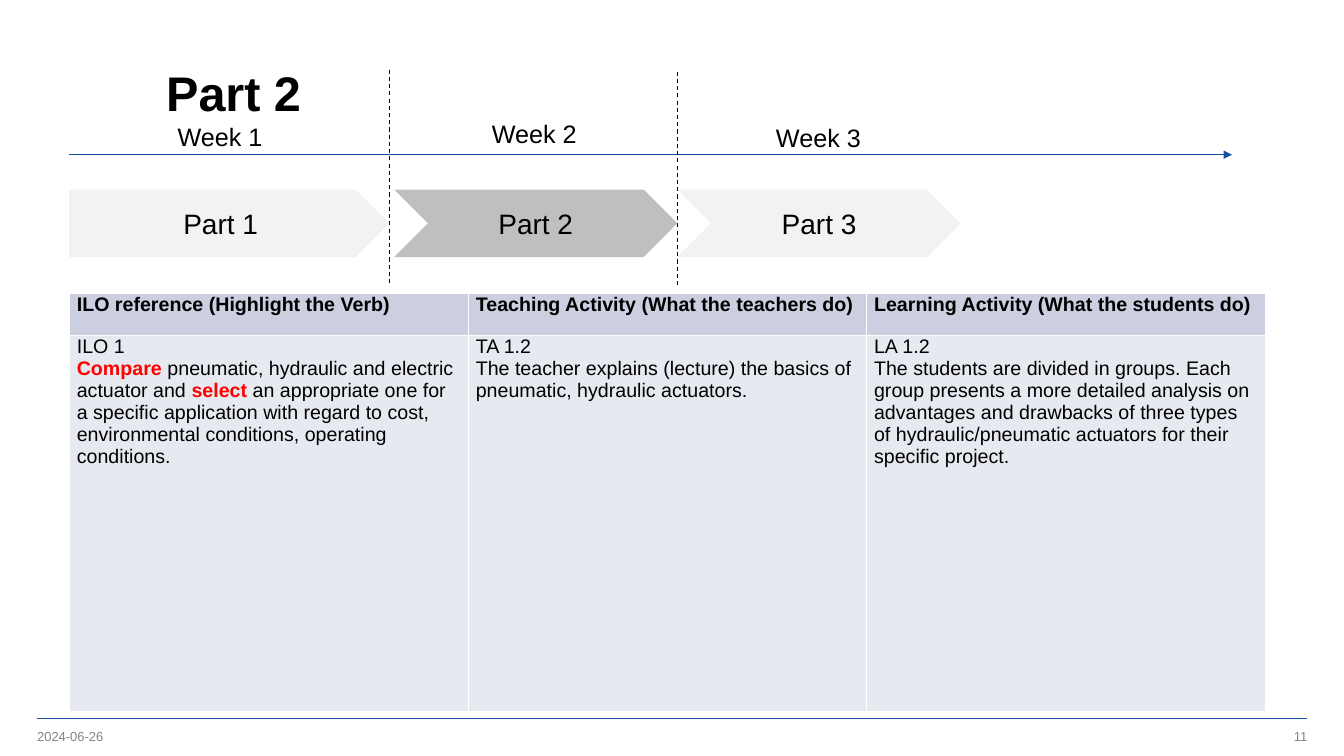
"""Build a slide with a course timeline and a table of linked activities."""
from dataclasses import dataclass

from lxml import etree
from pptx import Presentation
from pptx.dml.color import RGBColor
from pptx.enum.dml import MSO_LINE
from pptx.enum.shapes import MSO_CONNECTOR, MSO_SHAPE
from pptx.enum.text import MSO_ANCHOR, PP_ALIGN
from pptx.oxml import parse_xml
from pptx.oxml.ns import nsdecls, qn
from pptx.shapes.autoshape import Shape
from pptx.slide import Slide
from pptx.table import _Cell
from pptx.text.text import TextFrame
from pptx.util import Pt

PLATE, CHEVRON = MSO_SHAPE.PENTAGON, MSO_SHAPE.CHEVRON
STRAIGHT, DASH = MSO_CONNECTOR.STRAIGHT, MSO_LINE.DASH
TOP, MIDDLE = MSO_ANCHOR.TOP, MSO_ANCHOR.MIDDLE
LEFT, CENTER, RIGHT = PP_ALIGN.LEFT, PP_ALIGN.CENTER, PP_ALIGN.RIGHT


@dataclass(frozen=True)
class Theme:
    font: str = "Arial"
    ink: str = "000000"
    mark: str = "FF0000"
    muted: str = "848489"
    rule: str = "1954A6"
    arrow: str = "1451A5"
    pale: str = "F2F2F2"
    active: str = "BFBFBF"
    head: str = "CBCFE0"
    body: str = "E7E9F0"
    border: str = "FFFFFF"
    title: float = 34.7
    step: float = 20
    week: float = 18
    cell: float = 14
    foot: float = 9.3


@dataclass(frozen=True)
class Label:
    text: str
    left: float
    top: float
    width: float
    height: float
    size: float
    color: str
    bold: bool = False
    align: PP_ALIGN = LEFT
    anchor: MSO_ANCHOR = TOP
    pad: tuple[float, float] = (7.2, 3.6)
    wrap: bool = True
    space: float = 1


@dataclass(frozen=True)
class Step:
    text: str
    left: float
    width: float
    form: MSO_SHAPE
    fill: str


@dataclass(frozen=True)
class Line:
    start: tuple[float, float]
    end: tuple[float, float]
    color: str
    width: float = 0.75
    dashed: bool = False
    tipped: bool = False


@dataclass(frozen=True)
class Column:
    width: float
    head: str
    lines: tuple[str, str]


LOOK = Theme()
STEP_TOP, STEP_HEIGHT = 135.4, 48.2
TABLE_LEFT, TABLE_TOP = 49.7, 209.5
ROWS = (30.2, 268.6)

LABELS = (
    Label("Part 2", 111.6, 26.6, 792.7, 70.6, LOOK.title, LOOK.ink,
          bold=True, anchor=MIDDLE, space=1.18),
    Label("2024-06-26", 26.6, 519.8, 216, 12.2, LOOK.foot, LOOK.muted,
          anchor=MIDDLE, pad=(0, 0)),
    Label("11", 717.8, 519.8, 216, 12.2, LOOK.foot, LOOK.muted,
          align=RIGHT, anchor=MIDDLE, pad=(0, 0)),
    *(Label(f"Week {number}", left, top, 75.6, 28.8, LOOK.week, LOOK.ink, wrap=False)
      for number, (left, top) in enumerate(((119.7, 83), (344.2, 81), (547.2, 83.7)), 1)),
)
LINES = (
    Line((26.2, 513.2), (933.5, 513.2), LOOK.rule, width=1),
    Line((49.4, 110.5), (880, 110.5), LOOK.arrow, tipped=True),
    Line((278.1, 49.8), (278.1, 204.2), LOOK.ink, dashed=True),
    Line((483.9, 51.2), (483.9, 204.2), LOOK.ink, dashed=True),
)
STEPS = (
    Step("Part 1", 49.4, 228.5, PLATE, LOOK.pale),
    Step("Part 2", 281.5, 202.4, CHEVRON, LOOK.active),
    Step("Part 3", 483.9, 202.4, CHEVRON, LOOK.pale),
)
COLUMNS = (
    Column(285, "ILO reference (Highlight the Verb)", (
        "ILO 1",
        "*Compare* pneumatic, hydraulic and electric actuator and *select* an "
        "appropriate one for a specific application with regard to cost, "
        "environmental conditions, operating conditions.")),
    Column(284.5, "Teaching Activity (What the teachers do)", (
        "TA 1.2",
        "The teacher explains (lecture) the basics of pneumatic, hydraulic actuators.")),
    Column(284.5, "Learning Activity (What the students do)", (
        "LA 1.2",
        "The students are divided in groups. Each group presents a more detailed "
        "analysis on advantages and drawbacks of three types of hydraulic/pneumatic "
        "actuators for their specific project.")),
)


def paint(frame: TextFrame, size: float, color: str, bold: bool = False) -> None:
    """Format every run of a text frame alike."""
    for para in frame.paragraphs:
        for run in para.runs:
            font = run.font
            font.name, font.size, font.bold = LOOK.font, Pt(size), bold
            font.color.rgb = RGBColor.from_string(color)


def add_label(slide: Slide, label: Label) -> None:
    """Add a text box."""
    box = slide.shapes.add_textbox(
        Pt(label.left), Pt(label.top), Pt(label.width), Pt(label.height))
    frame = box.text_frame
    frame.word_wrap, frame.vertical_anchor = label.wrap, label.anchor
    frame.margin_left = frame.margin_right = Pt(label.pad[0])
    frame.margin_top = frame.margin_bottom = Pt(label.pad[1])
    frame.text = label.text
    para = frame.paragraphs[0]
    para.alignment, para.line_spacing = label.align, label.space
    paint(frame, label.size, label.color, label.bold)


def add_step(slide: Slide, step: Step) -> None:
    """Add one block of the timeline."""
    shape: Shape = slide.shapes.add_shape(
        step.form, Pt(step.left), Pt(STEP_TOP), Pt(step.width), Pt(STEP_HEIGHT))
    shape.shadow.inherit = False
    shape.fill.solid()
    shape.fill.fore_color.rgb = RGBColor.from_string(step.fill)
    shape.line.fill.background()
    frame = shape.text_frame
    frame.text, frame.vertical_anchor = step.text, MIDDLE
    frame.paragraphs[0].alignment = CENTER
    paint(frame, LOOK.step, LOOK.ink)


def add_line(slide: Slide, line: Line) -> None:
    """Add a straight line, dashed or with an arrowhead if asked."""
    link = slide.shapes.add_connector(STRAIGHT, *map(Pt, line.start + line.end))
    link.line.color.rgb = RGBColor.from_string(line.color)
    link.line.width = Pt(line.width)
    if line.dashed:
        link.line.dash_style = DASH
    if line.tipped:
        etree.SubElement(link.line._get_or_add_ln(), qn("a:tailEnd"), type="triangle")
    etree.SubElement(link._element.spPr, qn("a:effectLst"))


def dress(cell: _Cell, fill: str) -> None:
    """Set the fill, margins and borders of a cell."""
    cell.fill.solid()
    cell.fill.fore_color.rgb = RGBColor.from_string(fill)
    cell.margin_left = cell.margin_right = Pt(5.2)
    cell.margin_top = cell.margin_bottom = Pt(0)
    for place, side in enumerate("LRTB"):
        cell._tc.get_or_add_tcPr().insert(place, parse_xml(
            f'<a:ln{side} {nsdecls("a")} w="{Pt(1)}"><a:solidFill>'
            f'<a:srgbClr val="{LOOK.border}"/></a:solidFill></a:ln{side}>'))


def fill_body(frame: TextFrame, lines: tuple[str, str]) -> None:
    """Write body lines, with starred words in bold red."""
    frame.text = "\n".join(lines).replace("*", "")
    for para, line in zip(frame.paragraphs, lines):
        para.text = ""
        for piece in line.split("*"):
            para.add_run().text = piece
    paint(frame, LOOK.cell, LOOK.ink)
    for para in frame.paragraphs:
        for run in para.runs[1::2]:
            run.font.bold = True
            run.font.color.rgb = RGBColor.from_string(LOOK.mark)


def add_grid(slide: Slide) -> None:
    """Add the table of activities."""
    width = sum(column.width for column in COLUMNS)
    table = slide.shapes.add_table(
        len(ROWS), len(COLUMNS), Pt(TABLE_LEFT), Pt(TABLE_TOP),
        Pt(width), Pt(sum(ROWS))).table
    for row, height in zip(table.rows, ROWS):
        row.height = Pt(height)
    for place, column in enumerate(COLUMNS):
        table.columns[place].width = Pt(column.width)
        head, body = table.cell(0, place), table.cell(1, place)
        dress(head, LOOK.head)
        dress(body, LOOK.body)
        head.text_frame.text = column.head
        paint(head.text_frame, LOOK.cell, LOOK.ink, bold=True)
        fill_body(body.text_frame, column.lines)


def main() -> None:
    """Build and save the slide."""
    deck = Presentation()
    deck.slide_width, deck.slide_height = Pt(960), Pt(540)
    slide = deck.slides.add_slide(deck.slide_layouts[6])
    for items, draw in ((LINES, add_line), (STEPS, add_step), (LABELS, add_label)):
        for item in items:
            draw(slide, item)
    add_grid(slide)
    deck.save("out.pptx")


if __name__ == "__main__":
    main()
